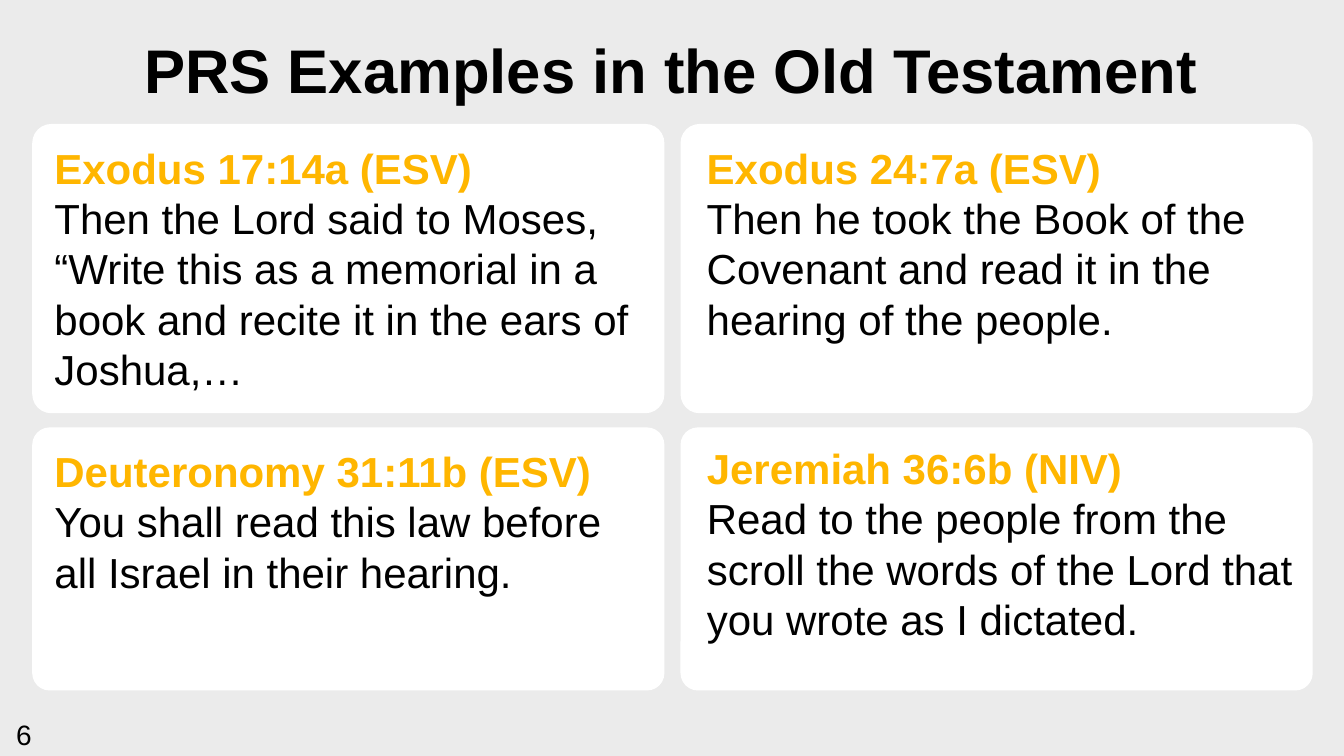
"""Build a slide with four Old Testament passages in a two-by-two grid of cards."""
from dataclasses import dataclass

from pptx import Presentation
from pptx.dml.color import RGBColor as Color
from pptx.enum.shapes import MSO_AUTO_SHAPE_TYPE as ShapeKind
from pptx.enum.text import MSO_ANCHOR as Anchor, MSO_AUTO_SIZE as AutoSize, PP_ALIGN as Align
from pptx.slide import Slide
from pptx.text.text import TextFrame
from pptx.util import Inches, Pt


@dataclass(frozen=True)
class Theme:
    """Colours, type sizes and font of the slide."""
    font: str = "Arial"
    backdrop: Color = Color.from_string("EBEBEB")
    card: Color = Color.from_string("FFFFFF")
    ink: Color = Color.from_string("000000")
    accent: Color = Color.from_string("FFB600")
    title_size: int = 44
    verse_size: int = 30
    number_size: int = 20


@dataclass(frozen=True)
class Grid:
    """Columns and rows of the cards, in inches."""
    left: float = 0.32
    top: float = 1.23
    width: float = 6.27
    column_gap: float = 0.16
    row_gap: float = 0.14
    heights: tuple[float, ...] = (2.87, 2.61)

    def cell(self, column: int, row: int) -> tuple[float, float, float, float]:
        """Return left, top, width and height of one cell."""
        left = self.left + column * (self.width + self.column_gap)
        top = self.top + sum(self.heights[:row]) + row * self.row_gap
        return left, top, self.width, self.heights[row]


@dataclass(frozen=True)
class Passage:
    """One quotation with its cell and the inset of its text."""
    column: int
    row: int
    reference: str
    verse: str
    inset: tuple[float, float]
    size: tuple[float, float]


THEME = Theme()
GRID = Grid()
PASSAGES = (
    Passage(0, 0, "Exodus 17:14a (ESV)",
            "Then the Lord said to Moses, “Write this as a memorial in a book "
            "and recite it in the ears of Joshua,…", (0.22, 0.18), (5.83, 2.52)),
    Passage(0, 1, "Deuteronomy 31:11b (ESV)",
            "You shall read this law before all Israel in their hearing.",
            (0.22, 0.18), (5.6, 1.51)),
    Passage(1, 0, "Exodus 24:7a (ESV)",
            "Then he took the Book of the Covenant and read it in the hearing "
            "of the people.", (0.26, 0.18), (5.76, 2.02)),
    Passage(1, 1, "Jeremiah 36:6b (NIV)",
            "Read to the people from the scroll the words of the Lord that you "
            "wrote as I dictated.", (0.26, 0.15), (5.88, 2.02)),
)


def apply(target: object, formats: dict[str, object]) -> None:
    """Set each named attribute on the target."""
    for name, value in formats.items():
        setattr(target, name, value)


def prepare(frame: TextFrame) -> None:
    """Give a text frame no margins, wrapping and a top anchor."""
    apply(frame, {"margin_left": 0, "margin_top": 0, "margin_right": 0, "margin_bottom": 0,
                  "word_wrap": True, "auto_size": AutoSize.NONE,
                  "vertical_anchor": Anchor.TOP})


def write(frame: TextFrame, text: str, size: int, color: Color = THEME.ink,
          bold: bool = False, align: Align = Align.LEFT) -> None:
    """Write one paragraph, filling the first one while it is empty."""
    para = frame.add_paragraph() if frame.text else frame.paragraphs[0]
    apply(para, {"alignment": align, "space_before": Pt(0)})
    span = para.add_run()
    span.text = text
    apply(span.font, {"name": THEME.font, "size": Pt(size), "bold": bold})
    span.font.color.rgb = color


def add_text(page: Slide, left: float, top: float, width: float, height: float) -> TextFrame:
    """Add an empty text box and return its frame."""
    box = page.shapes.add_textbox(*map(Inches, (left, top, width, height)))
    prepare(box.text_frame)
    return box.text_frame


def add_title(page: Slide, text: str) -> None:
    """Move the title placeholder to the head of the slide and fill it."""
    title = page.shapes.title
    apply(title, {"left": Inches(0.25), "top": Inches(0.32),
                  "width": Inches(12.82), "height": Inches(0.74)})
    prepare(title.text_frame)
    write(title.text_frame, text, THEME.title_size, bold=True, align=Align.CENTER)


def add_passage(page: Slide, passage: Passage) -> None:
    """Draw one card with its reference and verse."""
    cell = GRID.cell(passage.column, passage.row)
    card = page.shapes.add_shape(ShapeKind.ROUNDED_RECTANGLE, *map(Inches, cell))
    card.adjustments[0] = 0.066
    card.shadow.inherit = False
    card.fill.solid()
    card.fill.fore_color.rgb = THEME.card
    card.line.fill.background()
    frame = add_text(page, cell[0] + passage.inset[0], cell[1] + passage.inset[1], *passage.size)
    write(frame, passage.reference, THEME.verse_size, THEME.accent, bold=True)
    write(frame, passage.verse, THEME.verse_size)


def main() -> None:
    """Build and save the deck."""
    deck = Presentation()
    apply(deck, {"slide_width": Inches(13.33), "slide_height": Inches(7.5)})
    page = deck.slides.add_slide(deck.slide_layouts[5])
    page.background.fill.solid()
    page.background.fill.fore_color.rgb = THEME.backdrop
    add_title(page, "PRS Examples in the Old Testament")
    for passage in PASSAGES:
        add_passage(page, passage)
    write(add_text(page, 0.16, 7.12, 1.11, 0.34), "6", THEME.number_size)
    deck.save("out.pptx")


if __name__ == "__main__":
    main()
